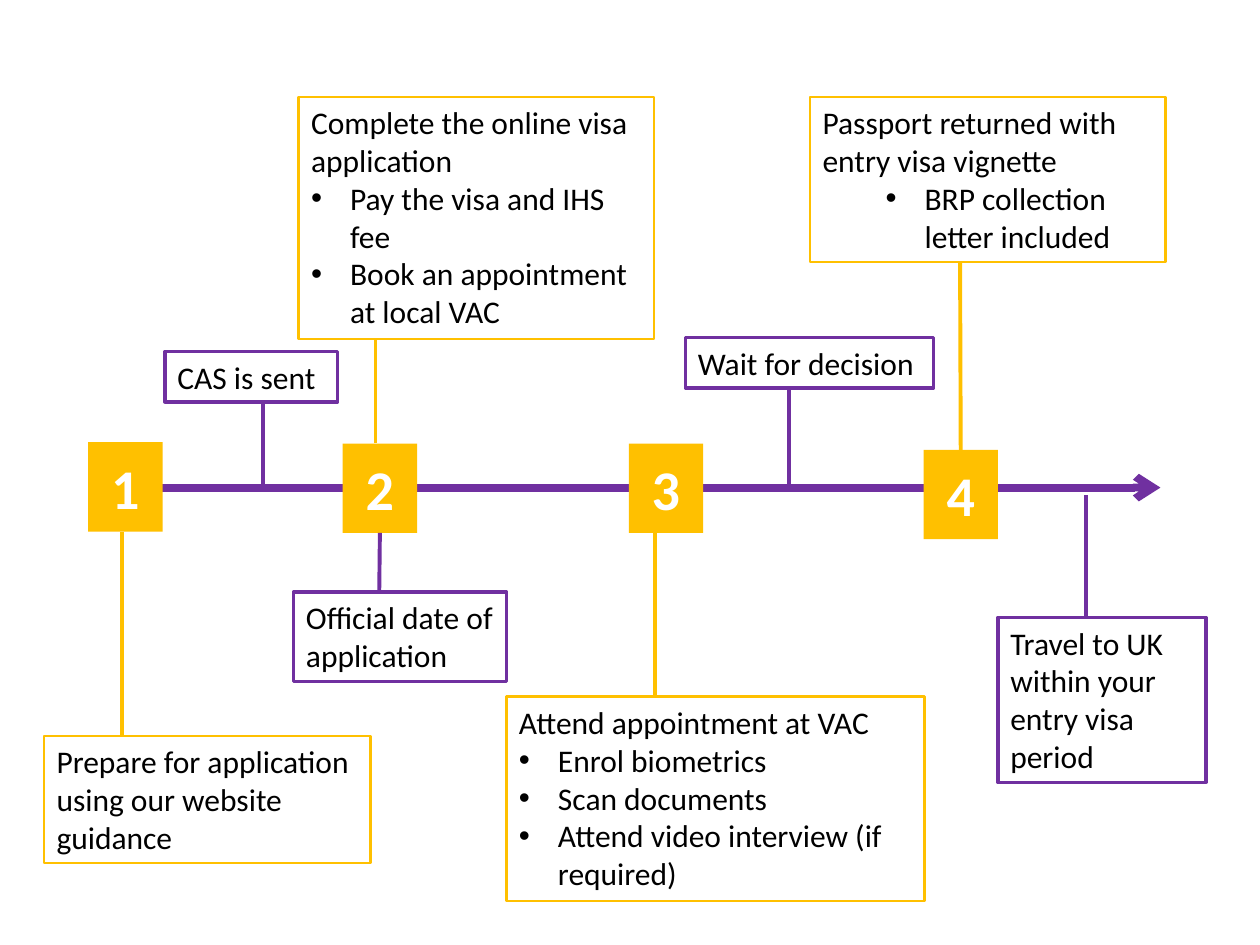
from lxml import etree
from pptx import Presentation
from pptx import util as u
from pptx.dml.color import RGBColor
from pptx.enum import shapes, text
from pptx.oxml.ns import qn

GOLD, PURPLE, WHITE, BLACK = "FFC000", "7030A0", "FFFFFF", "000000"
FONT = "Calibri"
AXIS = 3.87
STEP_W, STEP_H = 0.59, 0.71

# Numbered steps: left, top
steps = [(0.7, 3.51), (2.72, 3.52), (4.99, 3.52), (7.33, 3.57)]

# Notes: colour, box, stem x, stem y at the timeline, joined step and side,
# heading, bullets, bullet level
notes = [
    (GOLD, (0.35, 5.84, 2.59, 1.01), 0.97, 4.22, None,
     "Prepare for application using our website guidance", [], 0),
    (GOLD, (2.37, 0.77, 2.82, 1.92), 2.98, 3.52, None,
     "Complete the online visa application",
     ["Pay the visa and IHS fee", "Book an appointment at local VAC"], 0),
    (PURPLE, (1.31, 2.79, 1.37, 0.4), 2.09, AXIS, None, "CAS is sent", [], 0),
    (GOLD, (4.02, 5.53, 3.32, 1.62), 5.2, 4.23, None,
     "Attend appointment at VAC",
     ["Enrol biometrics", "Scan documents",
      "Attend video interview (if required)"], 0),
    (GOLD, (6.43, 0.77, 2.82, 1.31), 7.62, 3.57, (3, 0),
     "Passport returned with entry visa vignette",
     ["BRP collection letter included"], 1),
    (PURPLE, (2.33, 4.7, 1.69, 0.71), 3.01, 4.23, (1, 2),
     "Official date of application", [], 0),
    (PURPLE, (5.44, 2.68, 1.97, 0.4), 6.26, AXIS, None,
     "Wait for decision", [], 0),
    (PURPLE, (7.92, 4.9, 1.65, 1.31), 8.62, 3.93, None,
     "Travel to UK within your entry visa period", [], 0),
]

prs = Presentation()
prs.slide_width, prs.slide_height = u.Inches(10), u.Inches(7.5)
slide = prs.slides.add_slide(prs.slide_layouts[6])


def rgb(code):
    return RGBColor.from_string(code)


def line(x1, y1, x2, y2, color, width):
    con = slide.shapes.add_connector(
        shapes.MSO_CONNECTOR.STRAIGHT, *map(u.Inches, (x1, y1, x2, y2)))
    con.line.color.rgb = rgb(color)
    con.line.width = u.Pt(width)
    etree.SubElement(con._element.spPr, qn("a:effectLst"))
    return con


def rect(box, fill):
    shape = slide.shapes.add_shape(
        shapes.MSO_SHAPE.RECTANGLE, *map(u.Inches, box))
    shape.shadow.inherit = False
    shape.fill.solid()
    shape.fill.fore_color.rgb = rgb(fill)
    shape.text_frame.word_wrap = True
    return shape


def style(par, size, color, align, bold=False):
    par.alignment = align
    for run in par.runs:
        font = run.font
        font.name, font.size, font.bold = FONT, u.Pt(size), bold
        font.color.rgb = rgb(color)


def bullet(par, level):
    par.level = level
    props = par._p.get_or_add_pPr()
    props.set("marL", str(u.Inches(0.31 + 0.5 * level)))
    props.set("indent", str(u.Inches(-0.31)))
    etree.SubElement(props, qn("a:buFont")).set("typeface", "Arial")
    etree.SubElement(props, qn("a:buChar")).set("char", "•")


# Timeline arrow
axis = line(0.71, AXIS, 9.21, AXIS, PURPLE, 4.5)
etree.SubElement(axis.line._get_or_add_ln(), qn("a:tailEnd")).set("type", "arrow")

# Numbered squares
squares = []
for num, (x, y) in enumerate(steps, 1):
    square = rect((x, y, STEP_W, STEP_H), GOLD)
    square.line.fill.background()
    frame = square.text_frame
    frame.text = str(num)
    frame.vertical_anchor = text.MSO_ANCHOR.MIDDLE
    style(frame.paragraphs[0], 32, WHITE, text.PP_ALIGN.CENTER, True)
    squares.append(square)

# Notes with their stems
for color, box, x, y, joint, head, points, level in notes:
    note = rect(box, WHITE)
    note.line.color.rgb = rgb(color)
    note.line.width = u.Pt(1.5 if color == GOLD else 2)
    frame = note.text_frame
    frame.vertical_anchor = text.MSO_ANCHOR.TOP
    frame.auto_size = text.MSO_AUTO_SIZE.SHAPE_TO_FIT_TEXT
    frame.text = "\n".join([head] + points)
    for i, par in enumerate(frame.paragraphs):
        style(par, 18, BLACK, text.PP_ALIGN.LEFT)
        if i:
            bullet(par, level)

    top, height = box[1], box[3]
    edge = top if top > AXIS else top + height
    stem = line(x, y, x, edge, color, 2.25)
    if joint:
        step, side = joint
        stem.begin_connect(squares[step], side)

prs.save("out.pptx")
